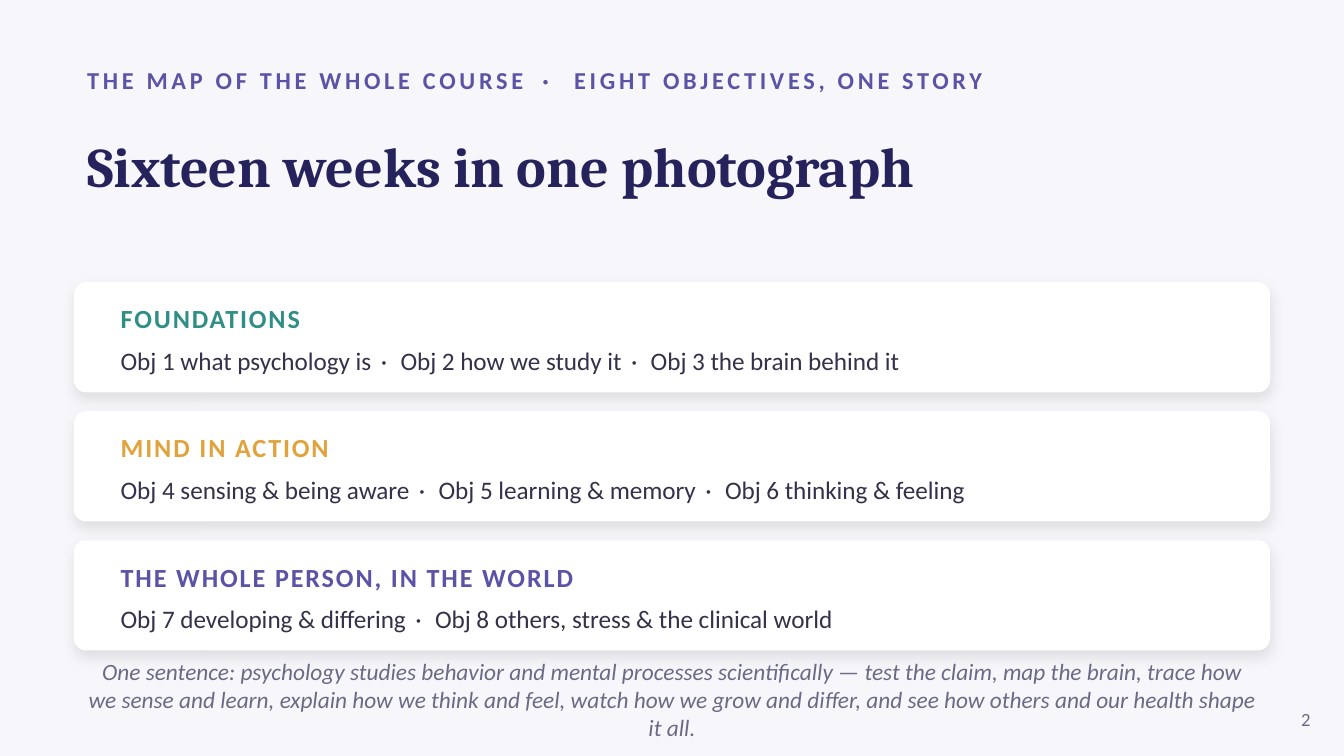
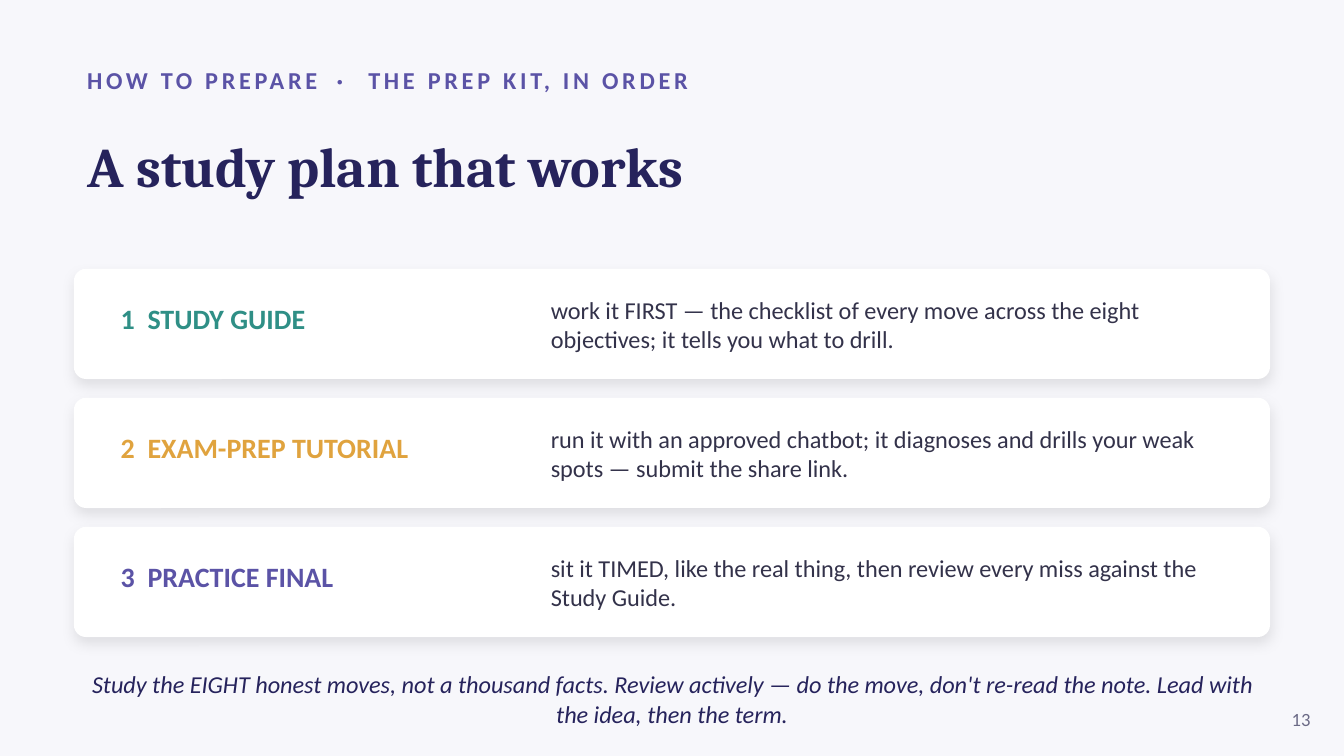
from lxml import etree
from pptx import Presentation
from pptx.dml.color import RGBColor
from pptx.enum.shapes import MSO_SHAPE
from pptx.enum.text import MSO_ANCHOR, MSO_AUTO_SIZE, PP_ALIGN
from pptx.oxml.ns import qn
from pptx.util import Pt

PX = 4572
ROUNDED = MSO_SHAPE.ROUNDED_RECTANGLE
MIDDLE = MSO_ANCHOR.MIDDLE
NO_FIT = MSO_AUTO_SIZE.NONE
LEFT, CENTER, RIGHT = PP_ALIGN.LEFT, PP_ALIGN.CENTER, PP_ALIGN.RIGHT

SANS, SERIF = "Calibri", "Cambria"
PAPER, WHITE, BLACK = "F7F7FB", "FFFFFF", "000000"
NAVY, INK, MUTED = "26235C", "33324A", "6B6A86"
TEAL, AMBER, VIOLET = "2F8F86", "E0A33E", "5B53A6"
ACCENTS = (TEAL, AMBER, VIOLET)

MARGIN, CONTENT_W = 110, 1780
CARD_H, CARD_STEP = 164, 192
SPACE_EM = 0.226
DOT = " · "


def color(value):
    """Turn a hex string into a colour."""
    return RGBColor.from_string(value)


def emu(*lengths):
    """Turn px lengths into EMU."""
    return [length * PX for length in lengths]


def write(frame, text, *, size, fill, font=SANS, bold=False, italic=False,
          align=LEFT, spacing=0, gap=DOT):
    """Fill a text frame; a list of parts is joined by a widened gap."""
    frame.word_wrap = True
    frame.auto_size = NO_FIT
    frame.vertical_anchor = MIDDLE
    paragraph = frame.paragraphs[0]
    paragraph.alignment = align
    widened = spacing + (SPACE_EM * size + spacing) * gap.count(" ") / len(gap)
    parts = [text] if isinstance(text, str) else text
    pieces = [(parts[0], spacing)]
    for part in parts[1:]:
        pieces += [(gap, widened), (part, spacing)]
    for piece, tracking in pieces:
        run = paragraph.add_run()
        run.text = piece
        run.font.name = font
        run.font.size = Pt(size)
        run.font.bold = bold
        run.font.italic = italic
        run.font.color.rgb = color(fill)
        if tracking:
            run._r.get_or_add_rPr().set("spc", str(round(tracking * 100)))


def label(slide, box, text, **style):
    """Add a text box at a px box."""
    write(slide.shapes.add_textbox(*emu(*box)).text_frame, text, **style)


def card(slide, top):
    """Add a white rounded card with a soft shadow and return its corner."""
    panel = slide.shapes.add_shape(ROUNDED, *emu(MARGIN, top, CONTENT_W, CARD_H))
    panel.adjustments[0] = 0.11
    panel.fill.solid()
    panel.fill.fore_color.rgb = color(WHITE)
    panel.line.fill.background()
    panel.shadow.inherit = False
    effects = panel.element.spPr.find(qn("a:effectLst"))
    shadow = etree.SubElement(effects, qn("a:outerShdw"), blurRad=str(Pt(7)),
                              dist=str(Pt(3)), dir="5400000", algn="bl",
                              rotWithShape="0")
    shade = etree.SubElement(shadow, qn("a:srgbClr"), val=BLACK)
    etree.SubElement(shade, qn("a:alpha"), val="10000")
    return MARGIN, top


def theme_card(slide, top, accent, heading, objectives):
    """Add a card with a heading above its objectives."""
    x, y = card(slide, top)
    label(slide, (x + 50, y + 24, 1680, 60), heading,
          size=14, fill=accent, bold=True, spacing=1)
    label(slide, (x + 50, y + 84, 1680, 64), objectives, size=13.5, fill=INK)


def step_card(slide, top, accent, step, advice):
    """Add a card with a numbered step beside its advice."""
    x, y = card(slide, top)
    label(slide, (x + 50, y + 24, 680, 100), step,
          size=15, fill=accent, bold=True, gap=" ")
    label(slide, (x + 690, y + 20, 1040, 124), advice, size=13, fill=INK)


def card_slide(prs, kicker, title, number, add_card, first_top, rows,
               closing, closing_size, closing_fill):
    """Add a slide with a heading, a stack of cards and a closing line."""
    slide = prs.slides.add_slide(prs.slide_layouts[5])
    label(slide, (MARGIN, 84, 1800, 70), kicker,
          size=13, fill=VIOLET, bold=True, spacing=2)
    heading = slide.shapes.title
    heading.left, heading.top, heading.width, heading.height = emu(
        MARGIN, 156, CONTENT_W, 180)
    write(heading.text_frame, title, size=30, fill=NAVY, font=SERIF, bold=True)
    for index, (accent, row) in enumerate(zip(ACCENTS, rows)):
        add_card(slide, first_top + index * CARD_STEP, accent, *row)
    label(slide, (MARGIN, 990, CONTENT_W, 100), closing, size=closing_size,
          fill=closing_fill, italic=True, align=CENTER)
    label(slide, (1870, 1040, 100, 60), number, size=10, fill=MUTED, align=RIGHT)


def main():
    """Build and save the deck."""
    prs = Presentation()
    prs.slide_width, prs.slide_height = emu(2000, 1125)
    backdrop = prs.slide_master.background.fill
    backdrop.solid()
    backdrop.fore_color.rgb = color(PAPER)

    themes = [
        ("FOUNDATIONS", ["Obj 1 what psychology is", "Obj 2 how we study it",
                         "Obj 3 the brain behind it"]),
        ("MIND IN ACTION", ["Obj 4 sensing & being aware",
                            "Obj 5 learning & memory",
                            "Obj 6 thinking & feeling"]),
        ("THE WHOLE PERSON, IN THE WORLD",
         ["Obj 7 developing & differing",
          "Obj 8 others, stress & the clinical world"]),
    ]
    card_slide(
        prs, ["THE MAP OF THE WHOLE COURSE", "EIGHT OBJECTIVES, ONE STORY"],
        "Sixteen weeks in one photograph", "2", theme_card, 420, themes,
        "One sentence: psychology studies behavior and mental processes "
        "scientifically — test the claim, map the brain, trace how we sense "
        "and learn, explain how we think and feel, watch how we grow and "
        "differ, and see how others and our health shape it all.", 12.5, MUTED)

    steps = [
        (["1", "STUDY GUIDE"],
         "work it FIRST — the checklist of every move across the eight "
         "objectives; it tells you what to drill."),
        (["2", "EXAM-PREP TUTORIAL"],
         "run it with an approved chatbot; it diagnoses and drills your weak "
         "spots — submit the share link."),
        (["3", "PRACTICE FINAL"],
         "sit it TIMED, like the real thing, then review every miss against "
         "the Study Guide."),
    ]
    card_slide(
        prs, ["HOW TO PREPARE", "THE PREP KIT, IN ORDER"],
        "A study plan that works", "13", step_card, 400, steps,
        "Study the EIGHT honest moves, not a thousand facts. Review actively "
        "— do the move, don't re-read the note. Lead with the idea, then the "
        "term.", 13, NAVY)

    prs.save("out.pptx")


if __name__ == "__main__":
    main()
